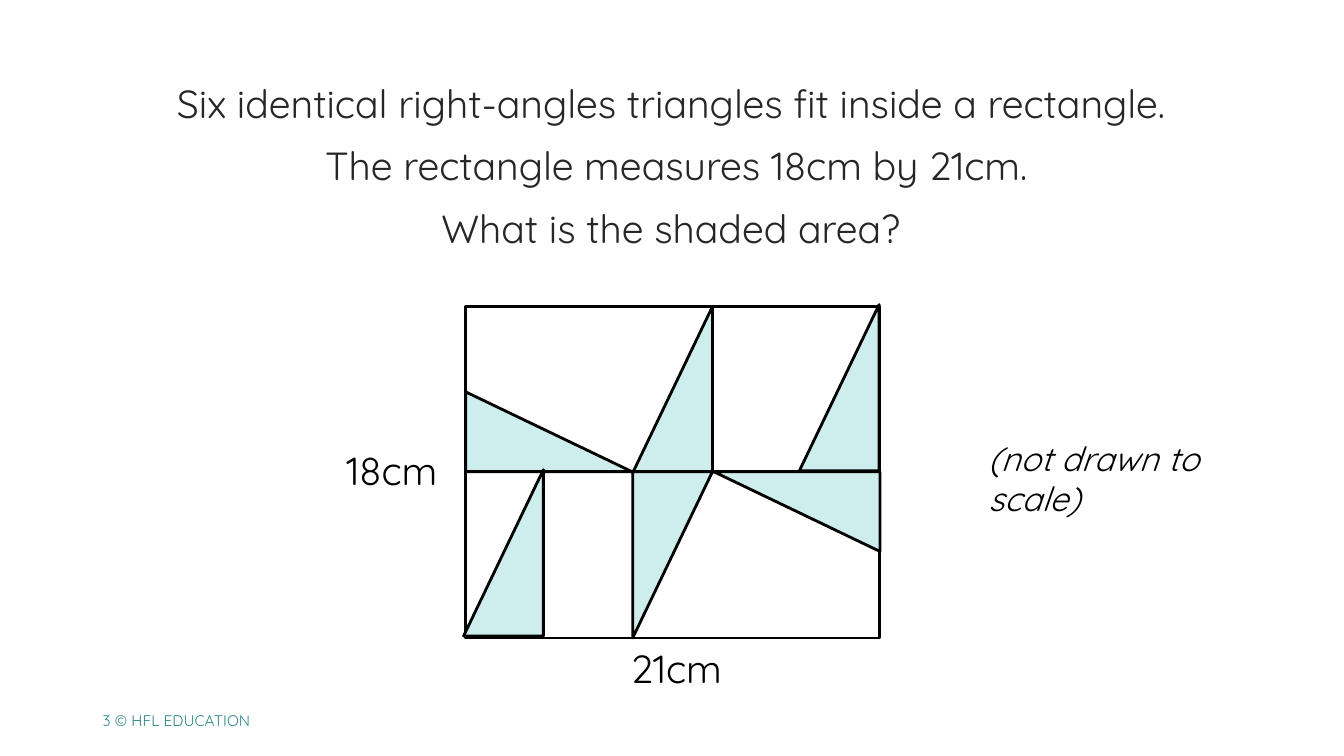
from pptx import Presentation
from pptx.dml.color import RGBColor
from pptx.enum.shapes import MSO_SHAPE
from pptx.enum.text import MSO_ANCHOR, PP_ALIGN
from pptx.util import Cm, Pt

COLOURS = {
    "paper": "FFFFFF",
    "shading": "CEEEEE",
    "outline": "000000",
    "question": "262626",
    "footer": "2F8989",
}

deck = Presentation()
deck.slide_width, deck.slide_height = Cm(33.87), Cm(19.05)
slide = deck.slides.add_slide(deck.slide_layouts[6])


def add_text(lines, left, top, width, height, size, colour):
    box = slide.shapes.add_textbox(Cm(left), Cm(top), Cm(width), Cm(height))
    frame = box.text_frame
    frame.word_wrap = True
    frame.text = "\n".join(lines)
    for paragraph in frame.paragraphs:
        paragraph.font.name = "Quicksand"
        paragraph.font.size = Pt(size)
        paragraph.font.color.rgb = RGBColor.from_string(COLOURS[colour])
    return frame


def add_outlined(kind, left, top, width, height, fill):
    shape = slide.shapes.add_shape(kind, Cm(left), Cm(top), Cm(width), Cm(height))
    shape.shadow.inherit = False
    shape.fill.solid()
    shape.fill.fore_color.rgb = RGBColor.from_string(COLOURS[fill])
    shape.line.color.rgb = RGBColor.from_string(COLOURS["outline"])
    shape.line.width = Pt(2)
    return shape


footer = add_text(["3 © HFL EDUCATION"], 2.34, 17.65, 6.99, 1.02, 11, "footer")
footer.vertical_anchor = MSO_ANCHOR.MIDDLE

question = add_text(
    [
        "Six identical right-angles triangles fit inside a rectangle. ",
        "The rectangle measures 18cm by 21cm.",
        "What is the shaded area? ",
    ],
    1.24, 1.88, 31.6, 4.67, 28, "question",
)
for sentence in question.paragraphs:
    sentence.alignment = PP_ALIGN.CENTER
    sentence.space_after = Pt(10.8)

scale_note = add_text(["(not drawn to scale)"], 24.66, 10.9, 8.18, 1.27, 24, "outline")
scale_note.paragraphs[0].font.italic = True

add_outlined(MSO_SHAPE.RECTANGLE, 11.73, 7.72, 10.44, 8.36, "paper")

long_leg, short_leg = 4.19, 2.01
triangles = [
    (16.95, 9.82, 270),
    (16.95, 13.98, 90),
    (13.83, 10.88, 0),
    (20.08, 12.89, 180),
    (21.15, 9.77, 270),
    (12.69, 13.93, 270),
]
for centre_x, centre_y, turn in triangles:
    triangle = add_outlined(
        MSO_SHAPE.RIGHT_TRIANGLE,
        centre_x - long_leg / 2, centre_y - short_leg / 2,
        long_leg, short_leg, "shading",
    )
    triangle.rotation = turn

for measure, left, top in [("18cm", 8.48, 11.13), ("21cm", 15.65, 16.1)]:
    add_text([measure], left, top, 3.91, 1.45, 28, "outline")

deck.save("out.pptx")
